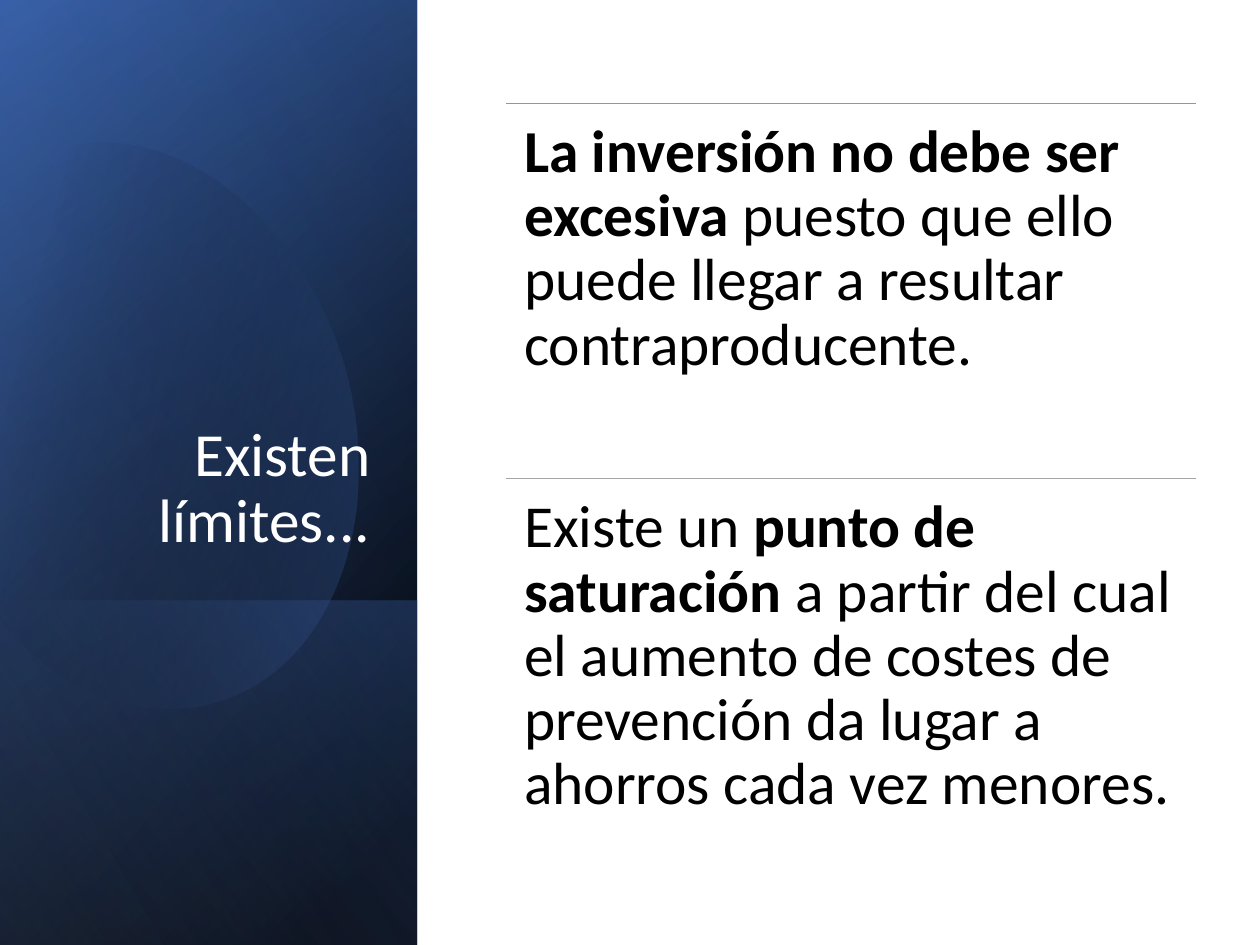
"""Build the slide on the limits of investing in prevention."""
import math
from dataclasses import dataclass

from lxml import etree
from pptx import Presentation, util as u
from pptx.dml.color import RGBColor
from pptx.enum import shapes, text
from pptx.oxml import ns

WIDTH, HEIGHT = 10, 7.5
FONT = "Calibri"
COLORS = {"black": "000000", "white": "FFFFFF", "navy": "2F5597", "blue": "4472C4",
          "sky": "8FAADC", "orange": "ED7D31", "gray": "A5A5A5"}
BAND_SHARE = 0.331
POINTS_LEFT, POINTS_TOP, POINTS_WIDTH, POINTS_ROW = 4.02, 0.82, 5.47, 2.98


@dataclass(frozen=True)
class Stop:
    position: int
    color: str
    opacity: int = 100


@dataclass(frozen=True)
class Panel:
    top_share: float
    angle: int
    stops: tuple[Stop, Stop]


@dataclass(frozen=True)
class Point:
    rule_color: str
    phrases: tuple[tuple[str, bool], ...]


BASE = Panel(0, 50, (Stop(8, "black"), Stop(100, "navy")))
GLOW = Panel(0, 30, (Stop(0, "black", 0), Stop(99, "blue", 46)))
FOOT = Panel(0.635, 130, (Stop(2, "blue", 29), Stop(100, "black", 30)))
SHEEN = Panel(0, 120, (Stop(0, "black", 0), Stop(99, "sky", 11)))

ARC_CENTER, ARC_TURN = (1.19, 3.35), 343.9
ARC_START = (0.96, 1.14)
ARC_EDGES = (
    ((1.71, 1.22), (2.44, 1.92), (2.73, 2.9)),
    ((3.07, 4.12), (2.62, 5.31), (1.71, 5.57)),
    ((1.14, 5.74), (0.53, 5.5), (0.07, 5)),
    ((-0.03, 4.88),),
    ((-0.25, 1.66),),
    ((-0.15, 1.54),),
    ((0.02, 1.37), (0.22, 1.25), (0.45, 1.18)),
    ((0.62, 1.13), (0.79, 1.12), ARC_START),
)
ARC_STOPS = (Stop(29, "black", 0), Stop(100, "blue", 43))

POINTS = (
    Point("orange", (("La inversión no debe ser excesiva ", True),
                     ("puesto que ello puede llegar a resultar contraproducente.", False))),
    Point("gray", (("Existe un ", False), ("punto de saturación ", True),
                   ("a partir del cual el aumento de costes de prevención "
                    "da lugar a ahorros cada vez menores.", False))),
)


def rgb(name: str) -> RGBColor:
    return RGBColor.from_string(COLORS[name])


def fill_gradient(shape, stops: tuple[Stop, ...], angle: int) -> None:
    shape.shadow.inherit = False
    shape.line.fill.background()
    shape.fill.background()
    gradient = etree.Element(ns.qn("a:gradFill"), rotWithShape="1")
    stop_list = etree.SubElement(gradient, ns.qn("a:gsLst"))
    for stop in stops:
        entry = etree.SubElement(stop_list, ns.qn("a:gs"), pos=str(stop.position * 1000))
        color = etree.SubElement(entry, ns.qn("a:srgbClr"), val=COLORS[stop.color])
        if stop.opacity < 100:
            etree.SubElement(color, ns.qn("a:alpha"), val=str(stop.opacity * 1000))
    etree.SubElement(gradient, ns.qn("a:lin"), ang=str(angle * 60000), scaled="0")
    properties = shape._element.spPr
    properties.replace(properties.find(ns.qn("a:noFill")), gradient)


def draw_panel(slide, panel: Panel) -> None:
    across = BAND_SHARE * WIDTH
    top = panel.top_share * HEIGHT
    down = HEIGHT - top
    band = slide.shapes.add_shape(
        shapes.MSO_SHAPE.RECTANGLE, u.Inches((across - down) / 2),
        u.Inches(top + (down - across) / 2), u.Inches(down), u.Inches(across))
    band.rotation = 90
    band._element.spPr.find(ns.qn("a:xfrm")).set("flipH", "1")
    fill_gradient(band, panel.stops, panel.angle)


def upright(point: tuple[float, float]) -> tuple[int, int]:
    turn = math.radians(360 - ARC_TURN)
    dx, dy = point[0] - ARC_CENTER[0], point[1] - ARC_CENTER[1]
    return (u.Inches(ARC_CENTER[0] + dx * math.cos(turn) - dy * math.sin(turn)),
            u.Inches(ARC_CENTER[1] + dx * math.sin(turn) + dy * math.cos(turn)))


def draw_arc(slide) -> None:
    builder = slide.shapes.build_freeform(*upright(ARC_START))
    builder.add_line_segments([upright(edge[-1]) for edge in ARC_EDGES], close=True)
    arc = builder.convert_to_shape()
    segments = list(arc._element.iter(ns.qn("a:lnTo")))
    for segment, edge in zip(segments, ARC_EDGES):
        if len(edge) == 3:
            curve = etree.Element(ns.qn("a:cubicBezTo"))
            for x, y in map(upright, edge):
                etree.SubElement(curve, ns.qn("a:pt"), x=str(x - arc.left), y=str(y - arc.top))
            segment.getparent().replace(segment, curve)
    arc.rotation = ARC_TURN
    fill_gradient(arc, ARC_STOPS, 30)


def draw_text(slide, frame: tuple[float, ...], phrases, size: int, color: str):
    box = slide.shapes.add_textbox(*map(u.Inches, frame)).text_frame
    box.word_wrap = True
    paragraph = box.paragraphs[0]
    paragraph.line_spacing = 0.9
    paragraph.font.name = FONT
    paragraph.font.size = u.Pt(size)
    paragraph.font.color.rgb = rgb(color)
    for words, bold in phrases:
        run = paragraph.add_run()
        run.text = words
        run.font.bold = bold
    return box


def draw_title(slide) -> None:
    title = draw_text(slide, (0.48, 1.84, 2.56, 2.62),
                      (("Existen límites...", False),), 35, "white")
    title.vertical_anchor = text.MSO_ANCHOR.BOTTOM
    title.paragraphs[0].alignment = text.PP_ALIGN.RIGHT


def draw_point(slide, row: int, point: Point) -> None:
    top = POINTS_TOP + row * POINTS_ROW
    rule = slide.shapes.add_connector(
        shapes.MSO_CONNECTOR.STRAIGHT, u.Inches(POINTS_LEFT), u.Inches(top),
        u.Inches(POINTS_LEFT + POINTS_WIDTH), u.Inches(top))
    rule.line.color.rgb = rgb(point.rule_color)
    rule.line.width = u.Pt(0.5)
    etree.SubElement(rule._element.spPr, ns.qn("a:effectLst"))
    body = draw_text(slide, (POINTS_LEFT, top, POINTS_WIDTH, POINTS_ROW),
                     point.phrases, 34, "black")
    body.margin_left = body.margin_right = u.Inches(0.14)
    body.margin_top = body.margin_bottom = u.Inches(0.14)


def main() -> None:
    deck = Presentation()
    deck.slide_width, deck.slide_height = u.Inches(WIDTH), u.Inches(HEIGHT)
    slide = deck.slides.add_slide(deck.slide_layouts[6])
    for panel in (BASE, GLOW, FOOT):
        draw_panel(slide, panel)
    draw_arc(slide)
    draw_panel(slide, SHEEN)
    draw_title(slide)
    for row, point in enumerate(POINTS):
        draw_point(slide, row, point)
    deck.save("out.pptx")


if __name__ == "__main__":
    main()
